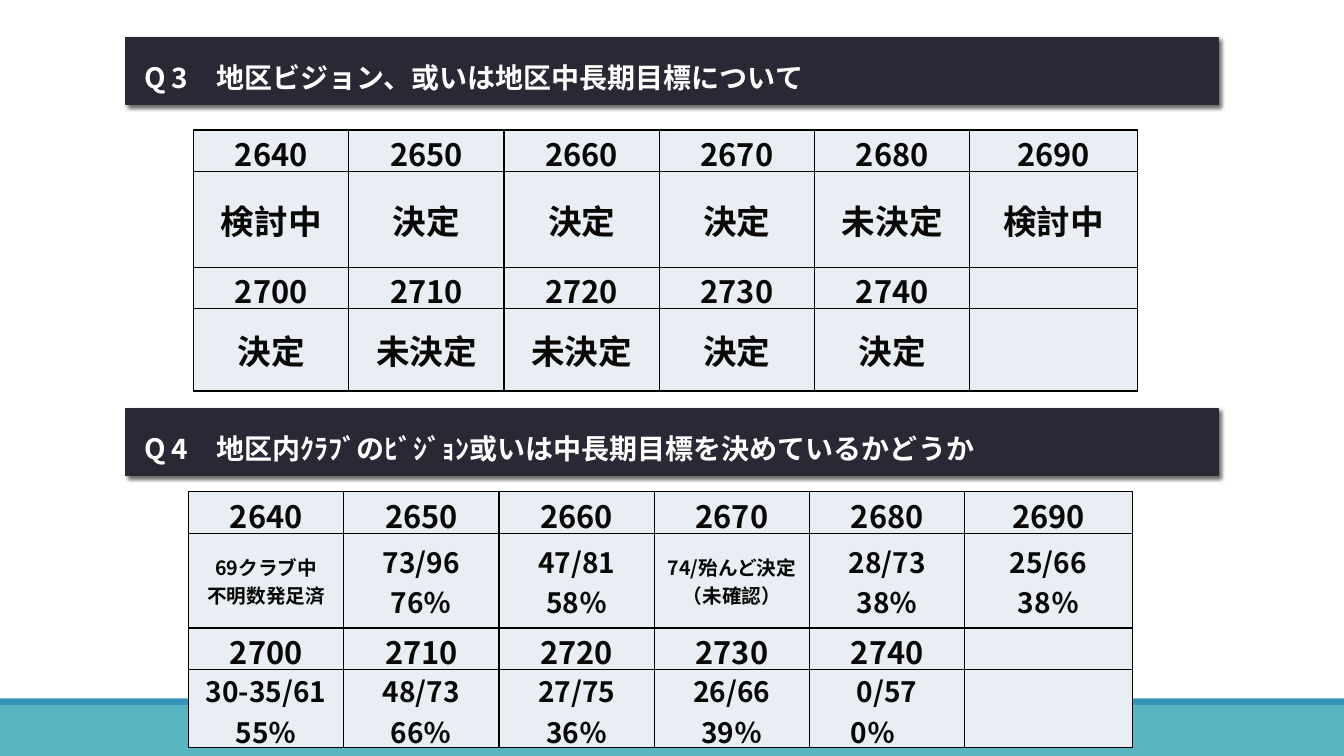
from lxml import etree
from pptx import Presentation
from pptx.dml.color import RGBColor
from pptx.enum import shapes, text
from pptx.oxml import parse_xml
from pptx.oxml.ns import qn
from pptx.util import Inches, Pt

# Content
FONT = "Noto Sans CJK JP"
INK, PALE, BAR, WHITE = "090807", "E8EEF3", "292834", "FFFFFF"
DISTRICTS = [["2640", "2650", "2660", "2670", "2680", "2690"],
             ["2700", "2710", "2720", "2730", "2740", ""]]
VISION = [["検討中", "決定", "決定", "決定", "未決定", "検討中"],
          ["決定", "未決定", "未決定", "決定", "決定", ""]]
CLUBS = [["69クラブ中\n不明数発足済", "73/96\n76％", "47/81\n58％",
          "74/殆んど決定\n（未確認）", "28/73\n38％", "25/66\n38％"],
         ["30-35/61\n55％", "48/73\n66％", "27/75\n36％", "26/66\n39％",
          "0/57\n0％\u3000".replace("\u3000", "　"), ""]]
COLUMNS = [1.54] * 5 + [1.66]
QUESTIONS = [
    dict(title="Q 3　地区ビジョン、或いは地区中長期目標について", bar_top=0.37,
         left=1.92, top=1.29, rows=[0.41, 0.95, 0.41, 0.82], answers=VISION, size=24),
    dict(title="Q 4　地区内ｸﾗﾌﾞのﾋﾞｼﾞｮﾝ或いは中長期目標を決めているかどうか", bar_top=4.05,
         left=1.87, top=4.88, rows=[0.41, 0.94, 0.41, 0.78], answers=CLUBS, size=20),
]
FOOTER = [(7, 0.5, "58B6C0"), (6.93, 0.07, "3494BA")]
NOTE_SIZE = 14
NS = 'xmlns:a="http://schemas.openxmlformats.org/drawingml/2006/main"'


def paint(target, color):
    target.solid()
    target.fore_color.rgb = RGBColor.from_string(color)


def write(frame, words, size, color=INK, align=None, spacing=None):
    for i, line in enumerate(words.split("\n")):
        para = frame.add_paragraph() if i else frame.paragraphs[0]
        para.alignment, para.line_spacing = align, spacing
        run = para.add_run()
        run.text = line
        run.font.size, run.font.bold, run.font.name = Pt(size), True, FONT
        run.font.color.rgb = RGBColor.from_string(color)
        etree.SubElement(run.font._element, qn("a:ea")).set("typeface", FONT)


def band(left, top, width, height, color):
    shape = slide.shapes.add_shape(shapes.MSO_SHAPE.RECTANGLE, Inches(left),
                                   Inches(top), Inches(width), Inches(height))
    shape.shadow.inherit = False
    paint(shape.fill, color)
    shape.line.fill.background()
    return shape


def heading(title, top):
    bar = band(1.25, top, 10.83, 0.67, BAR)
    paint(bar.line.fill, BAR)
    bar.line.width = Pt(1)
    bar._element.spPr.find(qn("a:effectLst")).append(parse_xml(
        f'<a:outerShdw {NS} blurRad="38100" dist="25400" dir="2700000">'
        '<a:srgbClr val="000000"><a:alpha val="60000"/></a:srgbClr></a:outerShdw>'))
    box = slide.shapes.add_textbox(Inches(1.33), Inches(top + 0.25),
                                   Inches(11.58), Inches(0.79))
    box.text_frame.word_wrap = True
    write(box.text_frame, title, 20, WHITE, spacing=0.8)


def fill_cell(cell, words, size):
    cell.margin_left = cell.margin_right = cell.margin_top = Inches(0.01)
    cell.margin_bottom = 0
    cell.vertical_anchor = text.MSO_ANCHOR.MIDDLE
    if words:
        write(cell.text_frame, words, size, align=text.PP_ALIGN.CENTER)
    props = cell._tc.get_or_add_tcPr()
    for side in ("lnL", "lnR", "lnT", "lnB"):
        props.append(parse_xml(f'<a:{side} {NS} w="12700"><a:solidFill>'
                               f'<a:srgbClr val="000000"/></a:solidFill></a:{side}>'))
    paint(cell.fill, PALE)


def answer_table(left, top, rows, answers, size):
    table = slide.shapes.add_table(
        len(rows), len(COLUMNS), Inches(left), Inches(top),
        Inches(sum(COLUMNS)), Inches(sum(rows))).table
    for column, width in zip(table.columns, COLUMNS):
        column.width = Inches(width)
    for r, height in enumerate(rows):
        table.rows[r].height = Inches(height)
        is_answer = r % 2
        source = answers if is_answer else DISTRICTS
        for c, words in enumerate(source[r // 2]):
            is_note = "不明" in words or "未確認" in words
            points = NOTE_SIZE if is_note else size if is_answer else 22
            fill_cell(table.cell(r, c), words, points)


prs = Presentation()
prs.slide_width, prs.slide_height = Inches(13.33), Inches(7.5)
slide = prs.slides.add_slide(prs.slide_layouts[6])

# Footer bands
for top, height, color in FOOTER:
    band(0, top, 13.33, height, color)

# Question headings, then their tables
for q in QUESTIONS:
    heading(q["title"], q["bar_top"])
for q in QUESTIONS:
    answer_table(q["left"], q["top"], q["rows"], q["answers"], q["size"])

prs.save("out.pptx")
